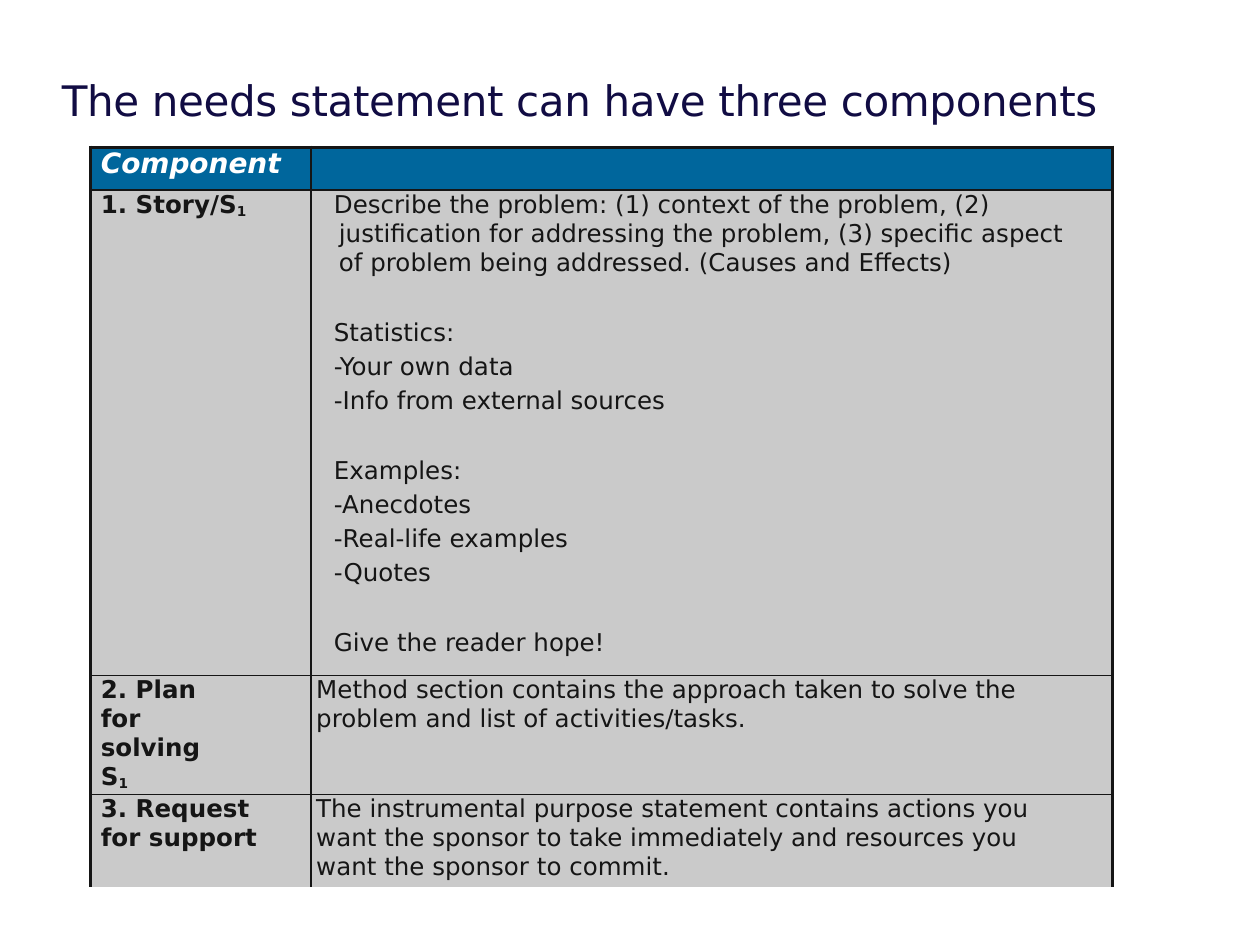
import pptx
import pptx.dml.color
import pptx.enum.text
import pptx.oxml.ns
import pptx.util
from dataclasses import dataclass
from lxml import etree

In, Pt = pptx.util.Inches, pptx.util.Pt


@dataclass(frozen=True)
class Theme:
    font: str = "DejaVu Sans"
    title: str = "110C43"
    ink: str = "151515"
    header: str = "00669C"
    header_text: str = "FFFFFF"
    body: str = "CACACA"
    title_size: float = 24
    header_size: float = 16
    body_size: float = 14
    sub_size: float = 13.5
    outer_line: float = 2.25
    inner_line: float = 1


THEME = Theme()
TITLE = "The needs statement can have three components"
HEADER = "Component"

# First column: label, subscript, right margin in inches
LABELS = [
    ("1. Story/S", "1", 0),
    ("2. Plan for solving S", "1", 0.75),
    ("3. Request for support", "", 0.35),
]
# Groups of lines in the story cell, set apart by a wide gap
STORY = [
    ["Describe the problem: (1) context of the problem, (2) justification for "
     "addressing the problem, (3) specific aspect of problem being addressed. "
     "(Causes and Effects)"],
    ["Statistics:", "-Your own data", "-Info from external sources"],
    ["Examples:", "-Anecdotes", "-Real-life examples", "-Quotes"],
    ["Give the reader hope!"],
]
PLAN = ("Method section contains the approach taken to solve the problem and "
        "list of activities/tasks.")
REQUEST = ("The instrumental purpose statement contains actions you want the "
           "sponsor to take immediately and resources you want the sponsor to commit.")

COLUMNS = [1.75, 6.36]
ROWS = [0.34, 3.85, 0.94, 0.73]
LINE_GAP, GROUP_GAP = 3, 23.5


def style(r, size, color, bold=False, italic=False):
    f = r.font
    f.name, f.size, f.bold, f.italic = THEME.font, Pt(size), bold, italic
    f.color.rgb = pptx.dml.color.RGBColor.from_string(color)


def set_margins(frame, left=0, top=0, right=0, bottom=0):
    frame.margin_left, frame.margin_top = In(left), In(top)
    frame.margin_right, frame.margin_bottom = In(right), In(bottom)


def set_borders(cell, row, col):
    """Heavy lines left, top and right of the table; its bottom stays open."""
    last_row, last_col = len(ROWS) - 1, len(COLUMNS) - 1
    on_edge = {"lnL": col == 0, "lnR": col == last_col, "lnT": row == 0, "lnB": False}
    tc_pr = cell._tc.get_or_add_tcPr()
    qn = pptx.oxml.ns.qn
    for i, (side, heavy) in enumerate(on_edge.items()):
        ln = etree.Element(qn("a:" + side))
        if side == "lnB" and row == last_row:
            etree.SubElement(ln, qn("a:noFill"))
        else:
            ln.set("w", str(Pt(THEME.outer_line if heavy else THEME.inner_line)))
            fill = etree.SubElement(ln, qn("a:solidFill"))
            etree.SubElement(fill, qn("a:srgbClr"), val=THEME.ink)
        tc_pr.insert(i, ln)


def add_title(slide, left, top, width, height):
    sp = slide.shapes.add_textbox(In(left), In(top), In(width), In(height))
    tf = sp.text_frame
    tf.word_wrap = True
    set_margins(tf, top=0.2)
    tf.text = TITLE
    r = tf.paragraphs[0].runs[0]
    style(r, THEME.title_size, THEME.title)
    r._r.get_or_add_rPr().set("spc", "-20")


def fill_label(cell, text, sub, right):
    set_margins(cell, left=0.08, right=right)
    p = cell.text_frame.paragraphs[0]
    p.text = text
    p.line_spacing = 1.01
    style(p.runs[0], THEME.body_size, THEME.ink, bold=True)
    if sub:
        r = p.add_run()
        r.text = sub
        style(r, THEME.sub_size, THEME.ink, bold=True)
        r._r.get_or_add_rPr().set("baseline", "-12000")


def fill_story(cell):
    set_margins(cell, left=0.18, right=0.25)
    tf = cell.text_frame
    for g, group in enumerate(STORY):
        for i, line in enumerate(group):
            first = g == 0 and i == 0
            p = tf.paragraphs[0] if first else tf.add_paragraph()
            p.text = line
            style(p.runs[0], THEME.body_size, THEME.ink)
            if first:
                # Hanging indent for the opening paragraph
                p.line_spacing = 1.01
                p_pr = p._p.get_or_add_pPr()
                p_pr.set("marL", str(In(0.04)))
                p_pr.set("indent", str(-In(0.04)))
            else:
                p.space_before = Pt(LINE_GAP if i else GROUP_GAP)


def fill_description(cell, text):
    set_margins(cell, left=0.04, right=0.4)
    p = cell.text_frame.paragraphs[0]
    p.text = text
    p.line_spacing = 1.01
    style(p.runs[0], THEME.body_size, THEME.ink)


def add_components(slide, left, top):
    frame = slide.shapes.add_table(len(ROWS), len(COLUMNS), In(left), In(top),
                                   In(sum(COLUMNS)), In(sum(ROWS)))
    table = frame.table
    table.first_row = table.horz_banding = False
    for column, width in zip(table.columns, COLUMNS):
        column.width = In(width)
    for row, height in zip(table.rows, ROWS):
        row.height = In(height)

    # Fills and borders
    for r in range(len(ROWS)):
        for c in range(len(COLUMNS)):
            cell = table.cell(r, c)
            set_margins(cell)
            cell.fill.solid()
            cell.fill.fore_color.rgb = pptx.dml.color.RGBColor.from_string(
                THEME.body if r else THEME.header)
            set_borders(cell, r, c)

    # Header
    head = table.cell(0, 0)
    head.margin_left = In(0.08)
    head.text_frame.text = HEADER
    style(head.text_frame.paragraphs[0].runs[0], THEME.header_size,
          THEME.header_text, bold=True, italic=True)

    # Body
    for r, label in enumerate(LABELS, 1):
        fill_label(table.cell(r, 0), *label)
    fill_story(table.cell(1, 1))
    fill_description(table.cell(2, 1), PLAN)
    fill_description(table.cell(3, 1), REQUEST)


def main():
    prs = pptx.Presentation()
    prs.slide_width, prs.slide_height = In(10), In(7.5)
    slide = prs.slides.add_slide(prs.slide_layouts[6])
    add_title(slide, 0.49, 0.39, 9.02, 1.07)
    add_components(slide, 0.72, 1.17)
    prs.save("out.pptx")


if __name__ == "__main__":
    main()
